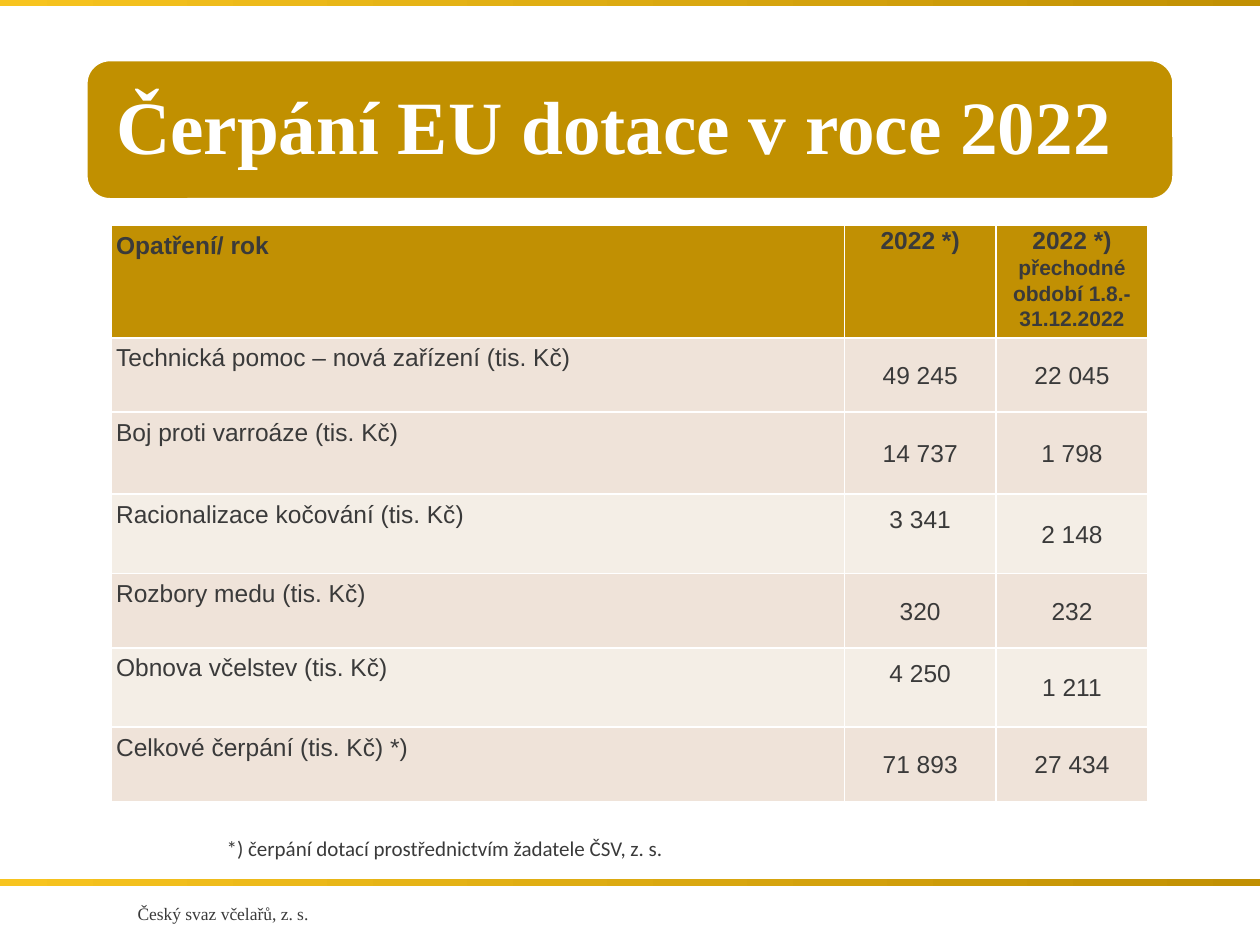
from pptx import Presentation
from pptx import util as u
from pptx.dml.color import RGBColor
from pptx.enum import shapes, text
from pptx.oxml import parse_xml
from pptx.oxml.ns import nsdecls

GOLD, DARK_GOLD, YELLOW = "C19000", "C19003", "F7C41F"
INK, WHITE, SAND, CREAM = "3A3A3A", "FFFFFF", "EFE3D9", "F4EEE6"
SERIF, SANS, NOTE = "Times New Roman", "Arial", "Calibri"
CENTER, LEFT = text.PP_ALIGN.CENTER, text.PP_ALIGN.LEFT
SLIDE_WIDTH, SLIDE_HEIGHT = 25.4, 19.05
COLUMN_WIDTHS = (14.78, 3.06, 3.06)
HEADINGS = ("Opatření/ rok", "2022 *)",
            "2022 *)\vpřechodné období 1.8.-31.12.2022")
HEADING_HEIGHT = 2.26
MEASURES = (
    ("Technická pomoc – nová zařízení (tis. Kč)", "49 245", "22 045", 1.5, SAND),
    ("Boj proti varroáze (tis. Kč)", "14 737", "1 798", 1.65, SAND),
    ("Racionalizace kočování (tis. Kč)", "3 341", "2 148", 1.6, CREAM),
    ("Rozbory medu (tis. Kč)", "320", "232", 1.5, SAND),
    ("Obnova včelstev (tis. Kč)", "4 250", "1 211", 1.6, CREAM),
    ("Celkové čerpání (tis. Kč) *)", "71 893", "27 434", 1.5, SAND),
)


def color(value):
    """Turn a hex string into a colour."""
    return RGBColor.from_string(value)


def write(frame, content, size, font, ink, bold=False, align=LEFT, spacing=None):
    """Fill a text frame with one formatted paragraph."""
    frame.text = content
    paragraph = frame.paragraphs[0]
    paragraph.alignment = align
    paragraph.line_spacing = spacing
    for run in paragraph.runs:
        run.font.size = u.Pt(size)
        run.font.name = font
        run.font.bold = bold
        run.font.color.rgb = color(ink)


def set_margins(target, side, vertical):
    """Set equal side margins and equal vertical margins in centimetres."""
    target.margin_left = target.margin_right = u.Cm(side)
    target.margin_top = target.margin_bottom = u.Cm(vertical)


def add_stripe(slide, top):
    """Draw a full-width gold gradient stripe."""
    stripe = slide.shapes.add_shape(
        shapes.MSO_SHAPE.RECTANGLE, 0, u.Cm(top), u.Cm(SLIDE_WIDTH), u.Cm(0.13))
    stripe.shadow.inherit = False
    stripe.line.fill.background()
    stripe.fill.gradient()
    stripe.fill.gradient_angle = 0
    for stop, shade in zip(stripe.fill.gradient_stops, (YELLOW, DARK_GOLD)):
        stop.color.rgb = color(shade)


def add_label(slide, box, content, size, font, align=LEFT):
    """Place a single-line text box."""
    frame = slide.shapes.add_textbox(*map(u.Cm, box)).text_frame
    frame.word_wrap = True
    write(frame, content, size, font, INK, align=align)


def add_title(slide, box, content):
    """Draw the title banner and set the title inside it."""
    left, top, width, height = box
    banner = slide.shapes.add_shape(
        shapes.MSO_SHAPE.ROUNDED_RECTANGLE, *map(u.Cm, box))
    banner.shadow.inherit = False
    banner.fill.solid()
    banner.fill.fore_color.rgb = color(GOLD)
    banner.line.color.rgb = color(WHITE)
    banner.line.width = u.Pt(1)

    inset = 0.13
    title = slide.shapes.title
    title.left, title.top = u.Cm(left + inset), u.Cm(top + inset)
    title.width, title.height = u.Cm(width - 2 * inset), u.Cm(height - 2 * inset)
    slide.shapes._spTree.append(title._element)
    frame = title.text_frame
    frame.auto_size = text.MSO_AUTO_SIZE.NONE
    frame.word_wrap = True
    frame.vertical_anchor = text.MSO_ANCHOR.MIDDLE
    set_margins(frame, 0.46, 0.46)
    write(frame, content, 43, SERIF, WHITE, bold=True, spacing=0.9)


def style_cell(cell, content, fill, is_label, is_heading):
    """Write one table cell with its fill and white borders."""
    properties = cell._tc.get_or_add_tcPr()
    for side in ("lnL", "lnR", "lnT", "lnB"):
        properties.append(parse_xml(
            f'<a:{side} {nsdecls("a")} w="12700"><a:solidFill>'
            f'<a:srgbClr val="{WHITE}"/></a:solidFill></a:{side}>'))
    cell.fill.solid()
    cell.fill.fore_color.rgb = color(fill)
    margin = 0.1 if is_label else 0
    set_margins(cell, margin, margin)
    at_top = is_label or is_heading
    cell.vertical_anchor = text.MSO_ANCHOR.TOP if at_top else text.MSO_ANCHOR.MIDDLE
    write(cell.text_frame, content, 14, SANS, INK, bold=is_heading,
          align=LEFT if is_label else CENTER, spacing=1.07)


def add_subsidy_table(slide, box):
    """Build the table of subsidies by measure."""
    rows = [(HEADINGS, HEADING_HEIGHT, DARK_GOLD)]
    rows += [(measure[:3], *measure[3:]) for measure in MEASURES]
    table = slide.shapes.add_table(
        len(rows), len(COLUMN_WIDTHS), *map(u.Cm, box)).table
    for column, width in zip(table.columns, COLUMN_WIDTHS):
        column.width = u.Cm(width)
    for row_index, (contents, height, fill) in enumerate(rows):
        table.rows[row_index].height = u.Cm(height)
        for column_index, content in enumerate(contents):
            style_cell(table.cell(row_index, column_index), content, fill,
                       column_index == 0, row_index == 0)
        if fill == CREAM:
            table.cell(row_index, 1).margin_bottom = u.Cm(0.6)
    period = table.cell(0, 2).text_frame.paragraphs[0].runs[-1]
    period.font.size = u.Pt(12)


def main():
    """Build and save the slide."""
    deck = Presentation()
    deck.slide_width, deck.slide_height = u.Cm(SLIDE_WIDTH), u.Cm(SLIDE_HEIGHT)
    slide = deck.slides.add_slide(deck.slide_layouts[5])
    for top in (0, 17.73):
        add_stripe(slide, top)
    add_label(slide, (1.37, 18.08, 6.25, 0.69), "Český svaz včelařů, z. s.",
              10, SERIF, CENTER)
    add_title(slide, (1.75, 1.22, 21.9, 2.79), "Čerpání EU dotace v roce 2022")
    add_subsidy_table(slide, (2.24, 4.55, sum(COLUMN_WIDTHS), 11.61))
    add_label(slide, (4.32, 16.71, 12.7, 0.76),
              "*) čerpání dotací prostřednictvím žadatele ČSV, z. s.", 12, NOTE)
    deck.save("out.pptx")


if __name__ == "__main__":
    main()
